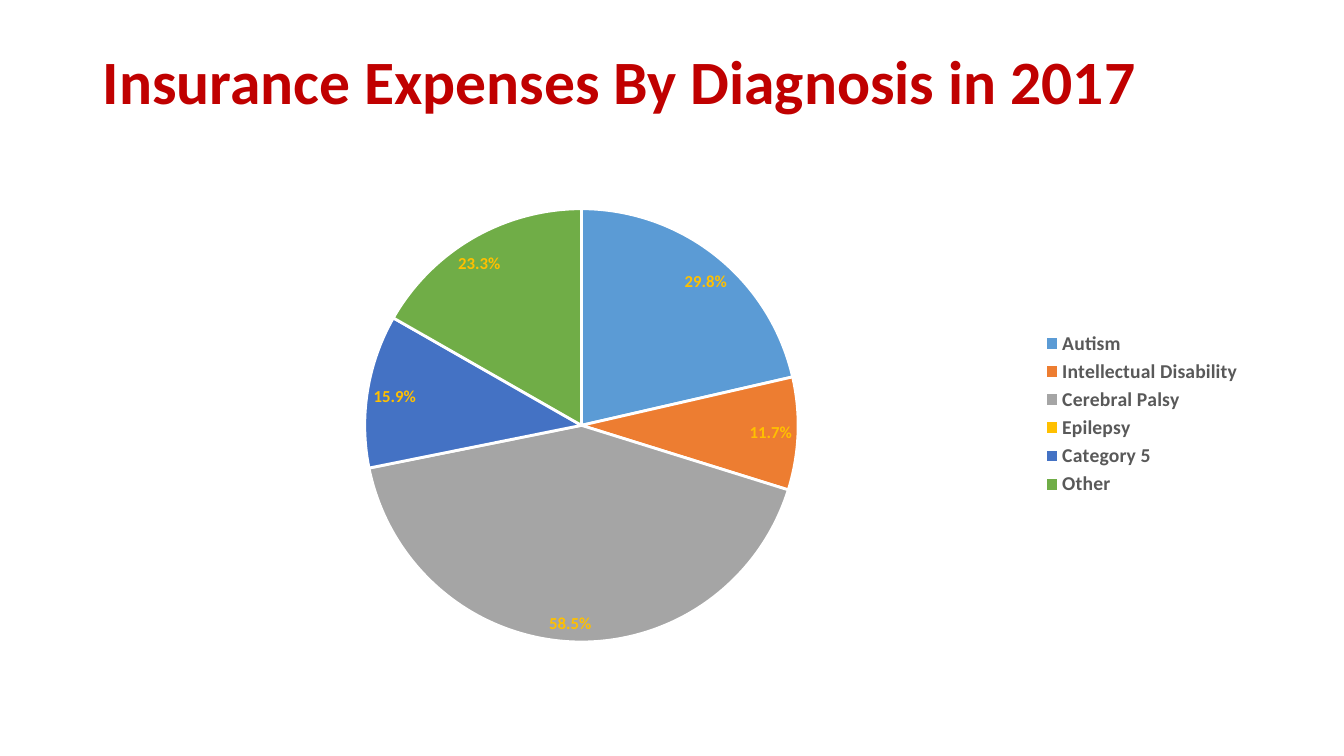
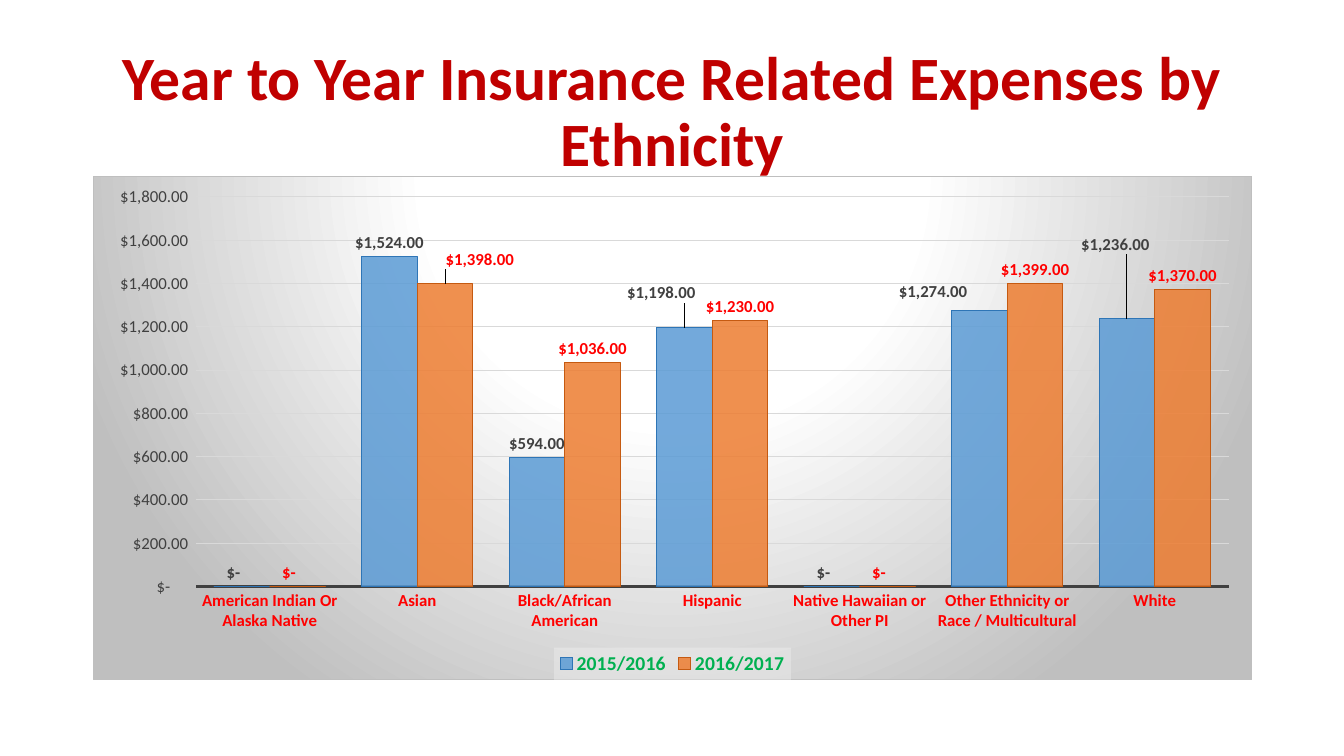
from pptx import Presentation
from pptx import util as u
from pptx.chart.data import CategoryChartData
from pptx.dml.color import RGBColor
from pptx.enum import chart as c
from pptx.enum import text
from pptx.oxml import parse_xml
from pptx.oxml.ns import nsdecls

FONT = "Calibri"
TITLE_COLOR = "C00000"
MONEY = r'_("$"* #,##0.00_);_("$"* \(#,##0.00\);_("$"* "-"??_);_(@_)'
PERCENT = "0.0%;;"

DIAGNOSIS_TITLE = "Insurance Expenses By Diagnosis in 2017"
DIAGNOSES = [
    ("Autism", 0.298, "5B9BD5"),
    ("Intellectual Disability", 0.117, "ED7D31"),
    ("Cerebral Palsy", 0.585, "A5A5A5"),
    ("Epilepsy", 0, "FFC000"),
    ("Category 5", 0.159, "4472C4"),
    ("Other", 0.233, "70AD47"),
]
PIE_AREA = {"x": 0.07, "y": 0.15, "w": 0.74, "h": 0.74}

ETHNICITY_TITLE = "Year to Year Insurance Related Expenses by Ethnicity"
ETHNICITIES = [
    "American Indian Or Alaska Native", "Asian", "Black/African American",
    "Hispanic", "Native Hawaiian or Other PI",
    "Other Ethnicity or Race / Multicultural", "White",
]
YEARS = [
    {"name": "2015/2016", "values": [0, 1524, 594, 1198, 0, 1274, 1236],
     "fill": "5B9BD5", "line": "2E75B6", "label": "404040",
     "offsets": {3: (-0.02, -0.04), 5: (-0.04, -0.01), 6: (-0.01, -0.12)}},
    {"name": "2016/2017", "values": [0, 1398, 1036, 1230, 0, 1399, 1370],
     "fill": "ED7D31", "line": "C55A11", "label": "FF0000",
     "offsets": {1: (0.03, -0.02)}},
]
BACKGROUND_STOPS = [(0, "FFFFFF"), (39, "FFFFFF"), (100, "BFBFBF")]


def rgb(value):
    return RGBColor.from_string(value)


def set_values(target, **values):
    for name, value in values.items():
        setattr(target, name, value)


def set_font(font, size, color, bold=False):
    set_values(font, name=FONT, size=u.Pt(size), bold=bold)
    font.color.rgb = rgb(color)


def set_line(line, color, width):
    line.color.rgb = rgb(color)
    line.width = u.Pt(width)


def set_fill(fill, color):
    fill.solid()
    fill.fore_color.rgb = rgb(color)


def chart_xml(tag, content="", attributes=""):
    return parse_xml(f'<c:{tag} {nsdecls("c", "a")} {attributes}>{content}</c:{tag}>')


def manual_layout(values, target=""):
    items = "".join(f'<c:{key} val="{value}"/>' for key, value in values.items())
    return chart_xml("layout", f"<c:manualLayout>{target}{items}</c:manualLayout>")


def add_titled_slide(presentation, title, height, alignment):
    slide = presentation.slides.add_slide(presentation.slide_layouts[5])
    shape = slide.shapes.title
    set_values(shape, left=u.Inches(0.92), top=u.Inches(0.4),
               width=u.Inches(11.5), height=u.Inches(height))
    frame = shape.text_frame
    frame.text = title
    set_values(frame, word_wrap=True, auto_size=text.MSO_AUTO_SIZE.NONE,
               vertical_anchor=text.MSO_ANCHOR.MIDDLE)
    paragraph = frame.paragraphs[0]
    set_values(paragraph, alignment=alignment, line_spacing=0.9)
    set_font(paragraph.runs[0].font, 44, TITLE_COLOR, True)
    return slide


def add_chart(slide, kind, box, categories, series, legend_position, legend_color):
    data = CategoryChartData()
    data.categories = categories
    for name, values in series:
        data.add_series(name, values)
    chart = slide.shapes.add_chart(kind, *map(u.Inches, box), data).chart
    set_values(chart, has_title=False, has_legend=True)
    set_font(chart.font, 10, "000000")
    set_values(chart.legend, position=legend_position, include_in_layout=False)
    set_font(chart.legend.font, 14, legend_color, True)
    return chart


def format_labels(labels, number_format, color, position):
    set_values(labels, show_value=True, number_format=number_format,
               number_format_is_linked=False, position=position)
    set_font(labels.font, 12, color, True)


def move_label(series, index, offset, color):
    label = series.points[index].data_label
    set_font(label.font, 12, color, True)
    label.position = c.XL_LABEL_POSITION.OUTSIDE_END
    position = series._element.xpath(f'c:dLbls/c:dLbl/c:idx[@val="{index}"]')[0]
    number_format = chart_xml("numFmt", attributes='sourceLinked="0"')
    number_format.set("formatCode", MONEY)
    position.addnext(number_format)
    position.addnext(manual_layout(dict(zip("xy", offset))))


def add_before_text(parent, properties):
    parent.xpath("c:txPr")[0].addprevious(chart_xml("spPr", properties))


def build_diagnosis_slide(presentation):
    slide = add_titled_slide(presentation, DIAGNOSIS_TITLE, 0.87, text.PP_ALIGN.LEFT)
    names, shares, colors = zip(*DIAGNOSES)
    chart = add_chart(slide, c.XL_CHART_TYPE.PIE, (0.54, 1.2, 11.88, 5.81), names,
                      [("Series 1", shares)], c.XL_LEGEND_POSITION.RIGHT, "595959")
    plot = chart.plots[0]
    plot.vary_by_categories = True
    series = plot.series[0]
    for index, color in enumerate(colors):
        point_format = series.points[index].format
        set_fill(point_format.fill, color)
        set_line(point_format.line, "FFFFFF", 2)
    format_labels(series.data_labels, PERCENT, "FFC000", c.XL_LABEL_POSITION.BEST_FIT)
    area = chart.element.xpath("c:chart/c:plotArea")[0]
    for layout in area.xpath("c:layout"):
        area.remove(layout)
    target = ('<c:layoutTarget val="inner"/><c:xMode val="edge"/>'
              '<c:yMode val="edge"/>')
    area.insert(0, manual_layout(PIE_AREA, target))


def format_axes(chart):
    category_axis, value_axis = chart.category_axis, chart.value_axis
    for axis, color, bold in ((category_axis, "FF0000", True),
                              (value_axis, "404040", False)):
        set_values(axis, major_tick_mark=c.XL_TICK_MARK.NONE,
                   minor_tick_mark=c.XL_TICK_MARK.NONE)
        set_font(axis.tick_labels.font, 12, color, bold)
    set_line(category_axis.format.line, "404040", 1.5)
    set_values(value_axis, minimum_scale=0, maximum_scale=1800, major_unit=200,
               has_major_gridlines=True)
    value_axis.format.line.fill.background()
    set_line(value_axis.major_gridlines.format.line, "D9D9D9", 0.75)
    set_values(value_axis.tick_labels, number_format=MONEY,
               number_format_is_linked=False)


def build_ethnicity_slide(presentation):
    slide = add_titled_slide(presentation, ETHNICITY_TITLE, 1.45, text.PP_ALIGN.CENTER)
    chart = add_chart(slide, c.XL_CHART_TYPE.COLUMN_CLUSTERED, (0.92, 1.75, 11.5, 5),
                      ETHNICITIES, [(year["name"], year["values"]) for year in YEARS],
                      c.XL_LEGEND_POSITION.BOTTOM, "00B050")
    format_axes(chart)
    plot = chart.plots[0]
    set_values(plot, gap_width=65, overlap=0, vary_by_categories=False)
    for series, year in zip(plot.series, YEARS):
        set_fill(series.format.fill, year["fill"])
        set_line(series.format.line, year["line"], 0.75)
        fill_color = series._element.xpath("c:spPr/a:solidFill/a:srgbClr")[0]
        fill_color.append(parse_xml(f'<a:alpha {nsdecls("a")} val="85000"/>'))
        format_labels(series.data_labels, MONEY, year["label"],
                      c.XL_LABEL_POSITION.OUTSIDE_END)
        for index, offset in year["offsets"].items():
            move_label(series, index, offset, year["label"])
    stops = "".join(f'<a:gs pos="{position * 1000}"><a:srgbClr val="{color}"/></a:gs>'
                    for position, color in BACKGROUND_STOPS)
    add_before_text(chart.element, (
        f'<a:gradFill><a:gsLst>{stops}</a:gsLst><a:path path="circle">'
        '<a:fillToRect l="50000" t="-80000" r="50000" b="180000"/></a:path></a:gradFill>'
        '<a:ln w="9525"><a:solidFill><a:srgbClr val="BFBFBF"/></a:solidFill></a:ln>'))
    add_before_text(chart.element.xpath("c:chart/c:legend")[0], (
        '<a:solidFill><a:srgbClr val="F2F2F2"><a:alpha val="39000"/></a:srgbClr>'
        '</a:solidFill>'))


def main():
    presentation = Presentation()
    set_values(presentation, slide_width=u.Inches(13.33), slide_height=u.Inches(7.5))
    build_diagnosis_slide(presentation)
    build_ethnicity_slide(presentation)
    presentation.save("out.pptx")


if __name__ == "__main__":
    main()
